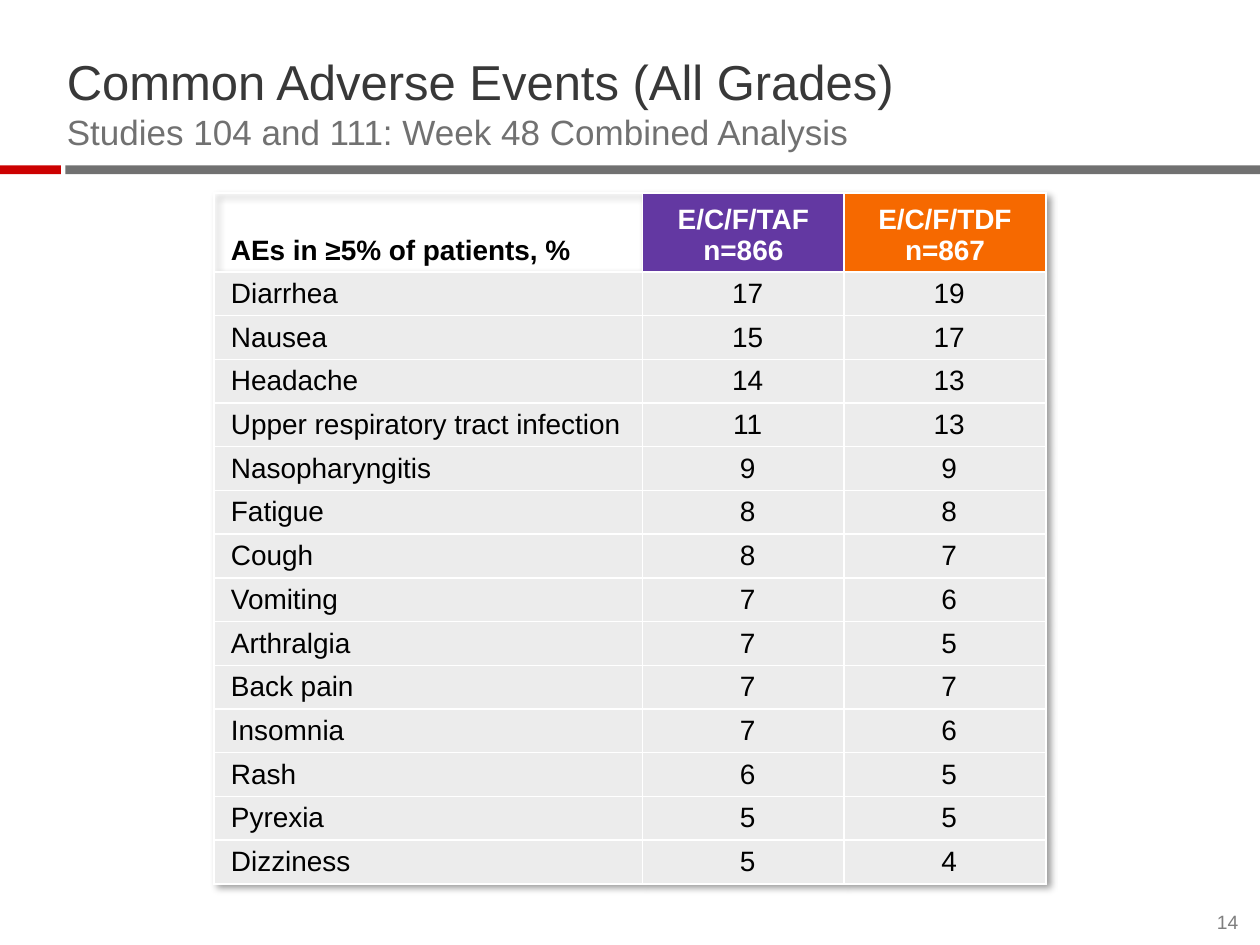
from typing import NamedTuple, Optional

from lxml import etree
from pptx import Presentation
from pptx.dml.color import RGBColor
from pptx.enum.shapes import MSO_SHAPE
from pptx.enum.text import MSO_ANCHOR, MSO_AUTO_SIZE, PP_ALIGN
from pptx.oxml.ns import qn
from pptx.util import Pt

LEFT, CENTER, RIGHT = PP_ALIGN.LEFT, PP_ALIGN.CENTER, PP_ALIGN.RIGHT
BOTTOM, MIDDLE = MSO_ANCHOR.BOTTOM, MSO_ANCHOR.MIDDLE

WHITE = RGBColor(0xFF, 0xFF, 0xFF)
BLACK = RGBColor(0x00, 0x00, 0x00)
CHARCOAL = RGBColor(0x38, 0x38, 0x38)
GRAY = RGBColor(0x71, 0x71, 0x71)
NUMBER_GRAY = RGBColor(0x7F, 0x7F, 0x7F)
RED = RGBColor(0xCC, 0x00, 0x00)
PURPLE = RGBColor(0x63, 0x38, 0xA2)
ORANGE = RGBColor(0xF6, 0x69, 0x00)
ROW_GRAY = RGBColor(0xEC, 0xEC, 0xEC)

FONT = "Arial"
COLUMN_WIDTHS = (244.8, 115.2, 115.2)
HEADER_HEIGHT, ROW_HEIGHT = 45.2, 25


class Bar(NamedTuple):
    left: float
    width: float
    color: RGBColor


class Heading(NamedTuple):
    text: str
    color: RGBColor
    fill: Optional[RGBColor]
    align: PP_ALIGN


class AdverseEvent(NamedTuple):
    name: str
    taf: int
    tdf: int


BARS = (Bar(37.4, 682.6, GRAY), Bar(0, 34.8, RED))
HEADINGS = (
    Heading("AEs in ≥5% of patients, %", BLACK, None, LEFT),
    Heading("E/C/F/TAF\nn=866", WHITE, PURPLE, CENTER),
    Heading("E/C/F/TDF\nn=867", WHITE, ORANGE, CENTER),
)
EVENTS = (
    AdverseEvent("Diarrhea", 17, 19),
    AdverseEvent("Nausea", 15, 17),
    AdverseEvent("Headache", 14, 13),
    AdverseEvent("Upper respiratory tract infection", 11, 13),
    AdverseEvent("Nasopharyngitis", 9, 9),
    AdverseEvent("Fatigue", 8, 8),
    AdverseEvent("Cough", 8, 7),
    AdverseEvent("Vomiting", 7, 6),
    AdverseEvent("Arthralgia", 7, 5),
    AdverseEvent("Back pain", 7, 7),
    AdverseEvent("Insomnia", 7, 6),
    AdverseEvent("Rash", 6, 5),
    AdverseEvent("Pyrexia", 5, 5),
    AdverseEvent("Dizziness", 5, 4),
)


def style_run(run, size: float, color: RGBColor, bold: bool = False) -> None:
    run.font.name = FONT
    run.font.size = Pt(size)
    run.font.color.rgb = color
    run.font.bold = bold


def clear_margins(frame) -> None:
    frame.margin_left = frame.margin_right = 0
    frame.margin_top = frame.margin_bottom = 0
    frame.vertical_anchor = BOTTOM
    frame.word_wrap = True
    frame.auto_size = MSO_AUTO_SIZE.NONE


def add_bar(slide, bar: Bar) -> None:
    shape = slide.shapes.add_shape(
        MSO_SHAPE.RECTANGLE, Pt(bar.left), Pt(94.5), Pt(bar.width), Pt(5))
    shape.shadow.inherit = False
    shape.fill.solid()
    shape.fill.fore_color.rgb = bar.color
    shape.line.fill.background()


def set_title(slide) -> None:
    title = slide.shapes.title
    title.left, title.top = Pt(38.2), Pt(33.8)
    title.width, title.height = Pt(648), Pt(53.3)
    clear_margins(title.text_frame)
    paragraph = title.text_frame.paragraphs[0]
    paragraph.text = ("Common Adverse Events (All Grades)\v"
                      "Studies 104 and 111: Week 48 Combined Analysis")
    paragraph.alignment = LEFT
    heading, subtitle = paragraph.runs
    style_run(heading, 28, CHARCOAL)
    style_run(subtitle, 20, GRAY)
    # The line break takes the heading's size
    line_break = paragraph._p.find(qn("a:br"))
    etree.SubElement(line_break, qn("a:rPr"), sz="2800")


def set_borders(cell, sides: str) -> None:
    properties = cell._tc.get_or_add_tcPr()
    for index, side in enumerate(sides):
        line = etree.Element(qn(f"a:ln{side}"), w=str(Pt(1)))
        fill = etree.SubElement(line, qn("a:solidFill"))
        etree.SubElement(fill, qn("a:srgbClr"), val=str(WHITE))
        properties.insert(index, line)


def fill_cell(cell, text: str, color: RGBColor, fill: Optional[RGBColor],
              align: PP_ALIGN, heading: bool = False) -> None:
    cell.margin_left = Pt(9.6)
    cell.margin_right = Pt(9.6 if heading else 4.8)
    cell.margin_top = cell.margin_bottom = Pt(3.3)
    cell.vertical_anchor = BOTTOM if heading else MIDDLE
    cell.text_frame.text = text
    for paragraph in cell.text_frame.paragraphs:
        paragraph.alignment = align
        for run in paragraph.runs:
            style_run(run, 16, color, heading)
    if fill is None:
        cell.fill.background()
    else:
        cell.fill.solid()
        cell.fill.fore_color.rgb = fill


def add_table_shadow(table) -> None:
    effects = etree.Element(qn("a:effectLst"))
    shadow = etree.SubElement(effects, qn("a:outerShdw"), blurRad=str(Pt(4)),
                              dist=str(Pt(3)), dir="2700000", algn="tl", rotWithShape="0")
    color = etree.SubElement(shadow, qn("a:srgbClr"), val=str(BLACK))
    etree.SubElement(color, qn("a:alpha"), val="40000")
    table._tbl.tblPr.insert(0, effects)


def add_events_table(slide) -> None:
    height = HEADER_HEIGHT + ROW_HEIGHT * len(EVENTS)
    table = slide.shapes.add_table(
        len(EVENTS) + 1, len(HEADINGS), Pt(122.4), Pt(110.2),
        Pt(sum(COLUMN_WIDTHS)), Pt(height)).table
    table.first_row = table.horz_banding = False
    for column, width in zip(table.columns, COLUMN_WIDTHS):
        column.width = Pt(width)
    for index, row in enumerate(table.rows):
        row.height = Pt(ROW_HEIGHT if index else HEADER_HEIGHT)

    for column, heading in enumerate(HEADINGS):
        cell = table.cell(0, column)
        fill_cell(cell, *heading, heading=True)
        set_borders(cell, "LR" if column else "B")
    for row, event in enumerate(EVENTS, start=1):
        for column, value in enumerate(event):
            cell = table.cell(row, column)
            fill_cell(cell, str(value), BLACK, ROW_GRAY, CENTER if column else LEFT)
            set_borders(cell, "LRTB")
    add_table_shadow(table)


def add_page_number(slide) -> None:
    frame = slide.shapes.add_textbox(Pt(688.3), Pt(520.6), Pt(19.4), Pt(13)).text_frame
    clear_margins(frame)
    frame.text = "14"
    frame.paragraphs[0].alignment = RIGHT
    style_run(frame.paragraphs[0].runs[0], 11, NUMBER_GRAY)


def main() -> None:
    presentation = Presentation()
    presentation.slide_width, presentation.slide_height = Pt(720), Pt(540)
    slide = presentation.slides.add_slide(presentation.slide_layouts[5])

    # Title and the rule below it
    for bar in BARS:
        add_bar(slide, bar)
    set_title(slide)

    # Adverse events by treatment arm
    add_events_table(slide)

    # Page number
    add_page_number(slide)
    presentation.save("out.pptx")


if __name__ == "__main__":
    main()
